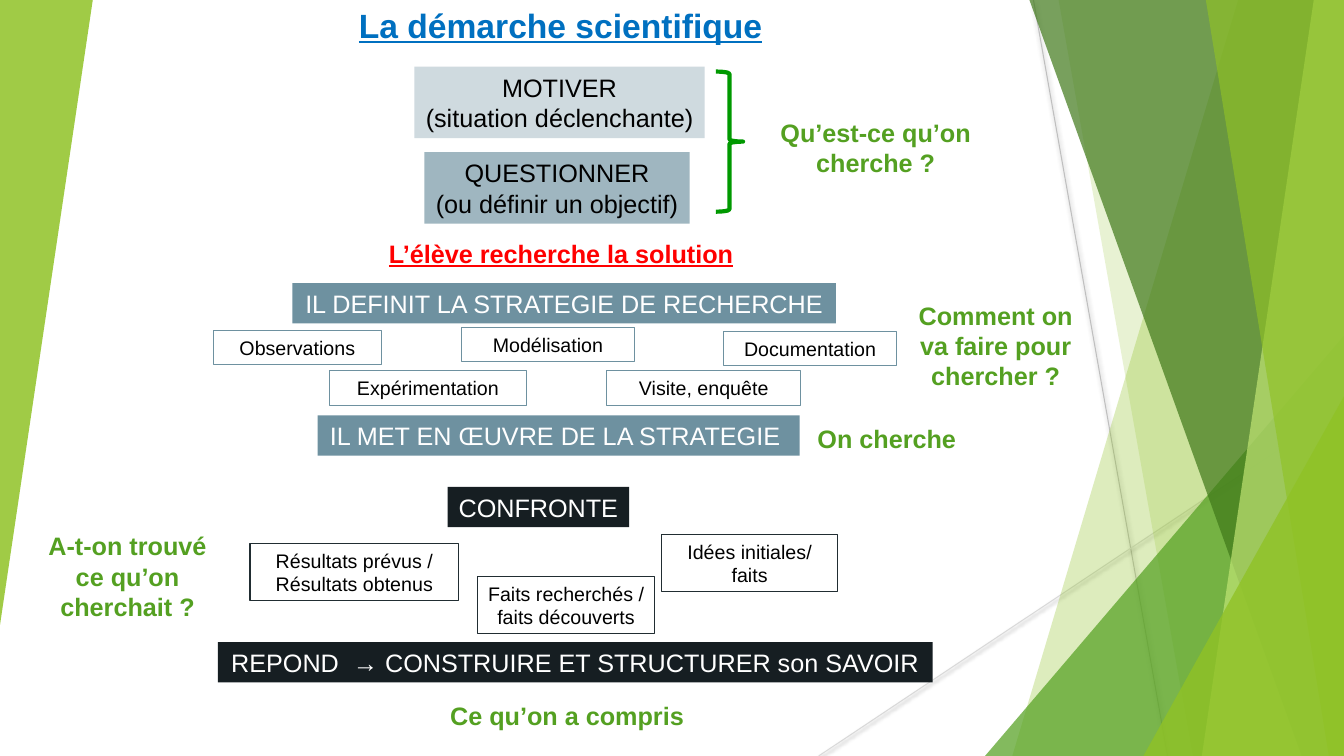
from lxml import etree
from pptx import Presentation
from pptx.dml.color import RGBColor
from pptx.enum.shapes import MSO_CONNECTOR, MSO_SHAPE
from pptx.enum.text import MSO_ANCHOR, MSO_AUTO_SIZE, PP_ALIGN
from pptx.oxml.ns import qn
from pptx.util import Inches, Pt

RECT = MSO_SHAPE.RECTANGLE
TRIANGLE = MSO_SHAPE.ISOSCELES_TRIANGLE
BRACE = MSO_SHAPE.RIGHT_BRACE
STRAIGHT = MSO_CONNECTOR.STRAIGHT
CENTER = PP_ALIGN.CENTER
MIDDLE = MSO_ANCHOR.MIDDLE
NO_FIT = MSO_AUTO_SIZE.NONE

WIDTH, HEIGHT = 13.33, 7.5
FONT = "Arial"
COLORS = {
    "blue": "0070C0", "red": "FF0000", "black": "000000", "white": "FFFFFF",
    "pale": "CFDADF", "mist": "9FB6C0", "slate": "6E91A0",
    "night": "161E22", "ink": "212D32",
    "lime": "90C226", "green": "54A021", "forest": "3F7819",
    "light": "C0E474", "brace": "009900", "gray": "BFBFBF", "silver": "D9D9D9",
}


def rgb(name):
    return RGBColor.from_string(COLORS[name])


def place(shape, box):
    shape.left, shape.top, shape.width, shape.height = map(Inches, box)


def write(shape, text, size, color, bold=False, line=False, wrap=True):
    frame = shape.text_frame
    frame.text = text
    frame.word_wrap = wrap
    frame.auto_size = NO_FIT
    frame.vertical_anchor = MIDDLE
    for para in frame.paragraphs:
        para.alignment = CENTER
        for run in para.runs:
            font = run.font
            font.name, font.size = FONT, Pt(size)
            font.bold, font.underline = bold, line
            font.color.rgb = rgb(color)


def paint(shape, color, alpha):
    """Fill without outline, at an opacity in percent."""
    shape.shadow.inherit = False
    shape.line.fill.background()
    shape.fill.solid()
    shape.fill.fore_color.rgb = rgb(color)
    tint = shape.fill._xPr.find(".//" + qn("a:srgbClr"))
    etree.SubElement(tint, qn("a:alpha"), val=str(alpha * 1000))


def add_ray(slide, start, end, color):
    """Thin background line with a soft shadow below it."""
    ray = slide.shapes.add_connector(STRAIGHT, *map(Inches, start + end))
    ray.line.color.rgb = rgb(color)
    ray.line.width = Pt(0.75)
    effects = etree.SubElement(ray._element.spPr, qn("a:effectLst"))
    shade = etree.SubElement(effects, qn("a:outerShdw"), blurRad=str(Pt(3.1)),
                             dist=str(Pt(1.6)), dir="5400000", rotWithShape="0")
    tint = etree.SubElement(shade, qn("a:srgbClr"), val=COLORS["black"])
    etree.SubElement(tint, qn("a:alpha"), val="38000")


def add_band(slide, top, base, color, alpha):
    """Slanted band that reaches the right edge of the slide."""
    points = [(WIDTH, 0), (WIDTH, HEIGHT), (base, HEIGHT)]
    path = slide.shapes.build_freeform(Inches(top), 0)
    path.add_line_segments([(Inches(x), Inches(y)) for x, y in points])
    paint(path.convert_to_shape(), color, alpha)


def add_wedge(slide, box, color, alpha, turn=0):
    wedge = slide.shapes.add_shape(TRIANGLE, *map(Inches, box))
    wedge.adjustments[0] = 1
    wedge.rotation = turn
    paint(wedge, color, alpha)


def add_step(slide, box, text, fill, color):
    step = slide.shapes.add_shape(RECT, *map(Inches, box))
    paint(step, fill, 100)
    write(step, text, 18, color, wrap=False)


def add_card(slide, box, text, edge):
    card = slide.shapes.add_shape(RECT, *map(Inches, box))
    card.shadow.inherit = False
    card.fill.background()
    card.line.color.rgb = rgb(edge)
    card.line.width = Pt(0.75)
    write(card, text, 14, "black")


def add_note(slide, box, text, color="green", line=False, wrap=True):
    note = slide.shapes.add_textbox(*map(Inches, box))
    write(note, text, 18, color, bold=True, line=line, wrap=wrap)


def add_brace(slide, box):
    brace = slide.shapes.add_shape(BRACE, *map(Inches, box))
    brace.shadow.inherit = False
    brace.adjustments[0] = 0.083
    brace.adjustments[1] = 0.5
    brace.fill.background()
    brace.line.color.rgb = rgb("brace")
    brace.line.width = Pt(3)


def add_decor(slide):
    add_ray(slide, (10.25, 0), (11.58, HEIGHT), "gray")
    add_ray(slide, (WIDTH, 4.03), (8.12, HEIGHT), "silver")
    add_band(slide, 12.28, 10.04, "lime", 30)
    add_band(slide, 10.5, 11.83, "lime", 20)
    add_wedge(slide, (9.77, 3.33, 3.56, 4.17), "green", 72)
    add_band(slide, 10.21, 12.91, "forest", 70)
    add_band(slide, 13.03, 11.92, "light", 70)
    add_band(slide, 11.96, 13.18, "lime", 65)
    add_wedge(slide, (11.34, 3.93, 1.99, 3.57), "lime", 80)
    add_wedge(slide, (0, 0, 0.92, 6.2), "lime", 85, turn=180)


def main():
    deck = Presentation()
    deck.slide_width, deck.slide_height = Inches(WIDTH), Inches(HEIGHT)
    slide = deck.slides.add_slide(deck.slide_layouts[5])
    add_decor(slide)

    # Title
    title = slide.shapes.title
    place(title, (3.44, 0, 4.24, 0.5))
    write(title, "La démarche scientifique", 24, "blue", True, True, False)

    # Main steps
    steps = [
        ((4.11, 0.66, 2.88, 0.71), "MOTIVER\n(situation déclenchante)", "pale", "black"),
        ((4.21, 1.51, 2.63, 0.71), "QUESTIONNER\n(ou définir un objectif)", "mist", "black"),
        ((2.9, 2.81, 5.39, 0.4), "IL DEFINIT LA STRATEGIE DE RECHERCHE", "slate", "white"),
        ((3.15, 4.12, 4.78, 0.4), "IL MET EN ŒUVRE DE LA STRATEGIE ", "slate", "white"),
        ((4.44, 4.83, 1.8, 0.4), "CONFRONTE", "night", "white"),
        ((2.16, 6.37, 7.09, 0.4), "REPOND  → CONSTRUIRE ET STRUCTURER son SAVOIR",
         "night", "white"),
    ]
    for step in steps:
        add_step(slide, *step)

    # Research methods and comparisons
    cards = [
        ((2.12, 3.28, 1.66, 0.34), "Observations", "slate"),
        ((4.58, 3.25, 1.71, 0.34), "Modélisation", "slate"),
        ((7.18, 3.29, 1.71, 0.34), "Documentation", "slate"),
        ((3.27, 3.68, 1.95, 0.34), "Expérimentation", "slate"),
        ((6.02, 3.68, 1.92, 0.34), "Visite, enquête", "slate"),
        ((2.48, 5.39, 2.07, 0.57), "Résultats prévus /\nRésultats obtenus", "ink"),
        ((4.74, 5.72, 1.75, 0.57), "Faits recherchés / faits découverts", "ink"),
        ((6.56, 5.3, 1.75, 0.57), "Idées initiales/ faits", "ink"),
    ]
    for card in cards:
        add_card(slide, *card)

    # Guiding questions
    add_note(slide, (3.74, 2.31, 3.65, 0.4), "L’élève recherche la solution",
             "red", line=True, wrap=False)
    notes = [
        ((7.63, 1.11, 2.11, 0.71), "Qu’est-ce qu’on cherche ?"),
        ((8.88, 2.92, 1.99, 1.01), "Comment on va faire pour chercher ?"),
        ((7.8, 4.15, 1.99, 0.4), "On cherche"),
        ((0.26, 5.21, 2.01, 1.01), "A-t-on trouvé ce qu’on cherchait ?"),
        ((4.31, 6.9, 2.63, 0.4), "Ce qu’on a compris"),
    ]
    for note in notes:
        add_note(slide, *note)
    add_brace(slide, (7.1, 0.71, 0.27, 1.39))

    deck.save("out.pptx")


if __name__ == "__main__":
    main()
